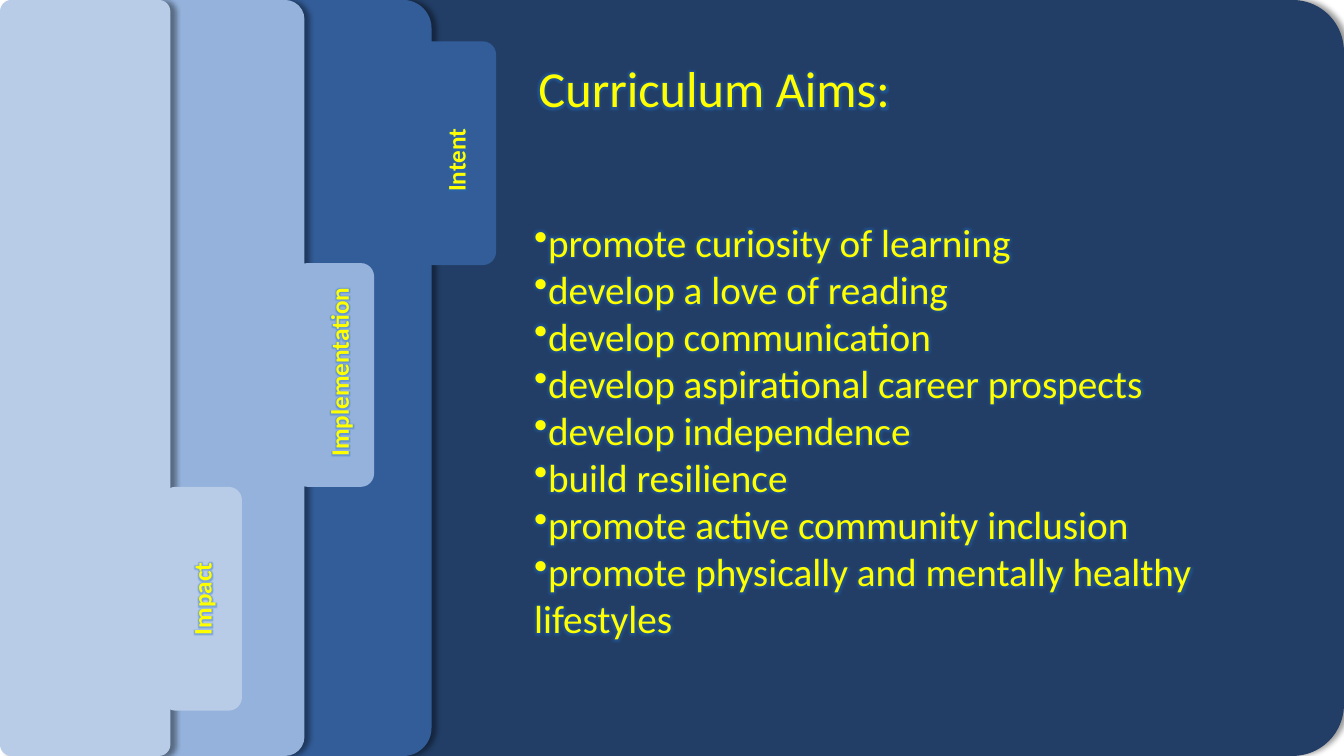
import pptx
import pptx.util
import pptx.oxml
import pptx.oxml.ns
from lxml import etree
from pptx.dml.color import RGBColor
from pptx.enum.shapes import MSO_SHAPE
from pptx.enum.text import MSO_ANCHOR, MSO_AUTO_SIZE, PP_ALIGN

NAVY = RGBColor(0x22, 0x3E, 0x66)
BLUE = RGBColor(0x33, 0x5D, 0x99)
SKY = RGBColor(0x94, 0xB2, 0xDB)
PALE = RGBColor(0xB8, 0xCB, 0xE7)
YELLOW = RGBColor(0xFF, 0xFF, 0x00)
GLOW = RGBColor(0x1F, 0x6F, 0xC8)
W, H = 13.33, 7.5
TAB_W, TAB_H = 0.79, 2.22
LABEL_H = 0.4
NS = pptx.oxml.ns.nsdecls("a")
SHADOW = (f'<a:effectLst {NS}><a:outerShdw blurRad="50800" dist="38100" dir="0">'
          '<a:srgbClr val="000000"><a:alpha val="40000"/></a:srgbClr>'
          '</a:outerShdw></a:effectLst>')
TEXT_GLOW = (f'<a:effectLst {NS}><a:glow rad="63500"><a:srgbClr val="{GLOW}">'
             '<a:alpha val="40000"/></a:srgbClr></a:glow></a:effectLst>')
AIMS = [
    "promote curiosity of learning",
    "develop a love of reading",
    "develop communication",
    "develop aspirational career prospects",
    "develop independence",
    "build resilience",
    "promote active community inclusion",
    "promote physically and mentally healthy lifestyles",
]
# name, colour, panel left and width, tab left and top, label centre and width, alignment
SECTIONS = [
    ("Intent", BLUE, (0.17, 4.11), (4.13, 0.41), (4.52, 1.52), 0.96, PP_ALIGN.LEFT),
    ("Implementation", SKY, (0.21, 2.81), (2.92, 2.61), (3.36, 3.69), 2.11, PP_ALIGN.CENTER),
    ("Impact", PALE, (0, 1.69), (1.61, 4.83), (2.0, 5.94), 1.53, PP_ALIGN.CENTER),
]


def add_card(box, colour, panel):
    """Add a plain rounded card; a panel has small corners and a shadow."""
    sp = s.shapes.add_shape(MSO_SHAPE.ROUNDED_RECTANGLE, *map(pptx.util.Inches, box))
    sp.fill.solid()
    sp.fill.fore_color.rgb = colour
    sp.line.fill.background()
    sp.shadow.inherit = False
    if panel:
        sp.adjustments[0] = 0.068
        props = sp.element.spPr
        props.replace(props.find(pptx.oxml.ns.qn("a:effectLst")), etree.fromstring(SHADOW))
    return sp


def write(sp, lines, size, align=PP_ALIGN.LEFT, bold=False):
    """Fill a text shape with glowing yellow paragraphs."""
    tf = sp.text_frame
    tf.word_wrap = True
    tf.text = "\n".join(lines)
    for p in tf.paragraphs:
        p.alignment = align
        p.font.name = "Calibri"
        p.font.size = pptx.util.Pt(size)
        p.font.bold = bold
        p.font.color.rgb = YELLOW
        for r in p.runs:
            r.font.size = pptx.util.Pt(size)
            r.font.fill.solid()
            r.font.fill.fore_color.rgb = YELLOW
            r.font.fill._xPr.append(etree.fromstring(TEXT_GLOW))
    return tf


prs = pptx.Presentation()
prs.slide_width, prs.slide_height = pptx.util.Inches(W), pptx.util.Inches(H)
s = prs.slides.add_slide(prs.slide_layouts[5])

backdrop = add_card((0, 0, W, H), NAVY, True)

title = s.shapes.title
backdrop.element.addnext(title.element)
title.left, title.top, title.width, title.height = map(
    pptx.util.Inches, (5.24, 0.52, 5.71, 0.71))
tf = write(title, ["Curriculum Aims:"], 36)
tf.vertical_anchor = MSO_ANCHOR.TOP
tf.auto_size = MSO_AUTO_SIZE.SHAPE_TO_FIT_TEXT

aims = s.shapes.add_textbox(*map(pptx.util.Inches, (5.2, 2.59, W - 5.2, 3.35)))
tf = write(aims, AIMS, 28)
tf.vertical_anchor = MSO_ANCHOR.MIDDLE
for p in tf.paragraphs:
    props = p._p.get_or_add_pPr()
    props.set("marL", "0")
    props.set("indent", "0")
    bullet = etree.fromstring(f'<a:buChar {NS} char="•"/>')
    props.insert_element_before(bullet, "a:tabLst", "a:defRPr", "a:extLst")

for name, colour, (left, width), tab, (cx, cy), label_w, align in SECTIONS:
    add_card((left, 0, width, H), colour, True)
    add_card((*tab, TAB_W, TAB_H), colour, False)
    label = s.shapes.add_textbox(*map(pptx.util.Inches, (
        cx - label_w / 2, cy - LABEL_H / 2, label_w, LABEL_H)))
    label.rotation = 270
    tf = write(label, [name], 18, align, True)
    tf.auto_size = MSO_AUTO_SIZE.SHAPE_TO_FIT_TEXT

prs.save("out.pptx")
